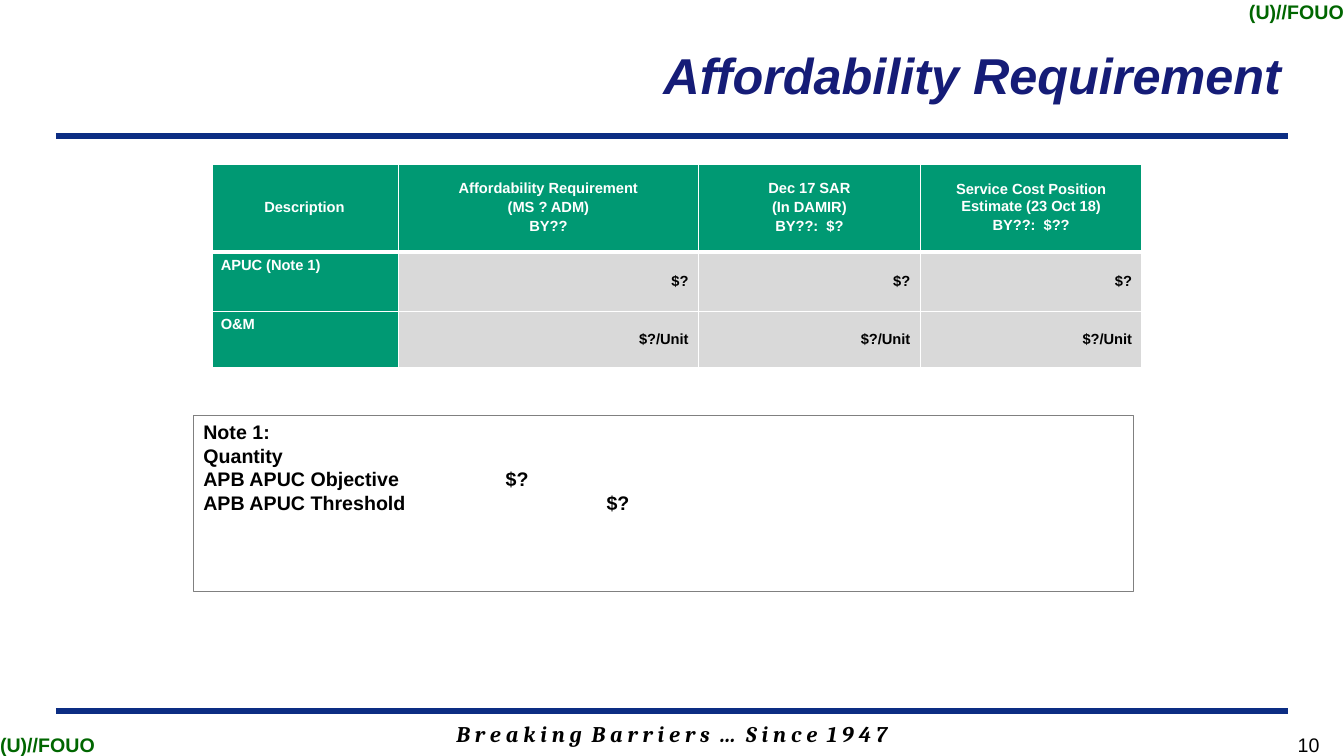
"""Build the Affordability Requirement slide with its cost table and note."""
import pptx
import pptx.dml.color
import pptx.enum.shapes
import pptx.enum.text
import pptx.oxml.ns
import pptx.util
from lxml import etree

Pt = pptx.util.Pt
ALIGN = pptx.enum.text.PP_ALIGN
ANCHOR = pptx.enum.text.MSO_ANCHOR

TITLE = "Affordability Requirement"
MARKING = "(U)//FOUO"
MOTTO = "B r e a k i n g  B a r r i e r s  …  S i n c e  1 9 4 7"
PAGE = "10"
COST_ROWS = [
    [["Description"],
     ["Affordability Requirement", "(MS ? ADM)", "BY??"],
     ["Dec 17 SAR", "(In DAMIR)", "BY??:  $?"],
     ["Service Cost Position Estimate (23 Oct 18)", "BY??:  $??"]],
    [["APUC (Note 1)"], ["$?"], ["$?"], ["$?"]],
    [["O&M"], ["$?/Unit"], ["$?/Unit"], ["$?/Unit"]],
]
NOTE = ["Note 1:", "Quantity", "APB APUC Objective\t\t$?", "APB APUC Threshold\t\t$?"]

THEME = {
    "rule": "0C2D83", "head_fill": "009973", "value_fill": "D9D9D9",
    "border": "FFFFFF", "note_line": "808080",
    "title": ("Arial", 36, "151C77", True, True),
    "motto": ("Cambria", 16, "000000", True, True),
    "marking": ("Arial", 14, "006600", True, False),
    "page": ("Arial", 14, "000000", False, False),
    "note": ("Arial", 14, "000000", True, False),
    "head": ("Arial", 10.5, "FFFFFF", True, False),
    "value": ("Arial", 10.5, "000000", True, False),
}
COLUMN_WIDTHS = [134, 214.5, 158.4, 158.4]
ROW_HEIGHTS = [63.4, 42.5, 40.3]
RULE_LEFT, RULE_RIGHT = 40, 920
RULE_TOPS = [97, 508]
TAB_STEP, TAB_COUNT = 72, 4
HEAD_GAP = 2.1


def rgb(name):
    return pptx.dml.color.RGBColor.from_string(THEME[name])


def write(frame, lines, style, align, gap=0, tabs=()):
    face, size, color, bold, italic = THEME[style]
    for index, line in enumerate(lines):
        paragraph = frame.paragraphs[0] if index == 0 else frame.add_paragraph()
        paragraph.text = line
        paragraph.alignment = align
        if index and gap:
            paragraph.space_before = Pt(gap)
        if tabs:
            stops = etree.SubElement(paragraph._p.get_or_add_pPr(), pptx.oxml.ns.qn("a:tabLst"))
            for stop in tabs:
                etree.SubElement(stops, pptx.oxml.ns.qn("a:tab"), pos=str(Pt(stop)), algn="l")
        font = paragraph.font
        font.name, font.size, font.bold, font.italic = face, Pt(size), bold, italic
        font.color.rgb = pptx.dml.color.RGBColor.from_string(color)


def add_label(slide, box, text, style, align, anchor, inset=True):
    frame = slide.shapes.add_textbox(*map(Pt, box)).text_frame
    frame.word_wrap = inset
    frame.vertical_anchor = anchor
    if not inset:
        frame.margin_left = frame.margin_right = frame.margin_top = frame.margin_bottom = 0
    write(frame, [text], style, align)


def add_rule(slide, top):
    rule = slide.shapes.add_connector(
        pptx.enum.shapes.MSO_CONNECTOR.STRAIGHT,
        Pt(RULE_LEFT), Pt(top), Pt(RULE_RIGHT), Pt(top))
    rule.line.color.rgb = rgb("rule")
    rule.line.width = Pt(4.5)
    etree.SubElement(rule._element.spPr, pptx.oxml.ns.qn("a:effectLst"))


def set_borders(cell, widths):
    properties = cell._tc.get_or_add_tcPr()
    for position, (side, width) in enumerate(widths.items()):
        edge = etree.Element(pptx.oxml.ns.qn("a:ln" + side), w=str(Pt(width)))
        fill = etree.SubElement(edge, pptx.oxml.ns.qn("a:solidFill"))
        etree.SubElement(fill, pptx.oxml.ns.qn("a:srgbClr"), val=THEME["border"])
        properties.insert(position, edge)


def add_costs(slide):
    table = slide.shapes.add_table(
        len(COST_ROWS), len(COLUMN_WIDTHS), Pt(150.5), Pt(116.6),
        Pt(sum(COLUMN_WIDTHS)), Pt(sum(ROW_HEIGHTS))).table
    for column, width in zip(table.columns, COLUMN_WIDTHS):
        column.width = Pt(width)
    for r, (row, height) in enumerate(zip(COST_ROWS, ROW_HEIGHTS)):
        table.rows[r].height = Pt(height)
        for c, lines in enumerate(row):
            cell = table.cell(r, c)
            is_head = r == 0 or c == 0
            cell.fill.solid()
            cell.fill.fore_color.rgb = rgb("head_fill" if is_head else "value_fill")
            cell.vertical_anchor = ANCHOR.TOP if r and c == 0 else ANCHOR.MIDDLE
            align = ALIGN.CENTER if r == 0 else ALIGN.LEFT if c == 0 else ALIGN.RIGHT
            write(cell.text_frame, lines, "head" if is_head else "value", align, HEAD_GAP)
            set_borders(cell, {"L": 1 if c else 3, "R": 1,
                               "T": 3 if r < 2 else 1, "B": 1 if r else 3})


def add_note(slide):
    note = slide.shapes.add_shape(
        pptx.enum.shapes.MSO_SHAPE.RECTANGLE, Pt(138.2), Pt(296.6), Pt(671.8), Pt(126))
    note.shadow.inherit = False
    note.fill.background()
    note.line.color.rgb = rgb("note_line")
    note.line.width = Pt(0.75)
    note.text_frame.word_wrap = True
    note.text_frame.vertical_anchor = ANCHOR.TOP
    tabs = [TAB_STEP * n for n in range(1, TAB_COUNT + 1)]
    write(note.text_frame, NOTE, "note", ALIGN.LEFT, tabs=tabs)


def main():
    deck = pptx.Presentation()
    deck.slide_width, deck.slide_height = Pt(960), Pt(540)
    slide = deck.slides.add_slide(deck.slide_layouts[6])
    add_label(slide, (136, 511, 688, 26.6), MOTTO, "motto", ALIGN.CENTER, ANCHOR.TOP)
    for top in RULE_TOPS:
        add_rule(slide, top)
    add_label(slide, (892, 0, 68, 17), MARKING, "marking", ALIGN.RIGHT, ANCHOR.TOP, False)
    add_label(slide, (0, 523, 68, 17), MARKING, "marking", ALIGN.LEFT, ANCHOR.BOTTOM, False)
    add_label(slide, (909.5, 523, 50.5, 18), PAGE, "page", ALIGN.CENTER, ANCHOR.MIDDLE)
    add_label(slide, (327, 6, 595.4, 93.6), TITLE, "title", ALIGN.RIGHT, ANCHOR.MIDDLE)
    add_costs(slide)
    add_note(slide)
    deck.save("out.pptx")


if __name__ == "__main__":
    main()
